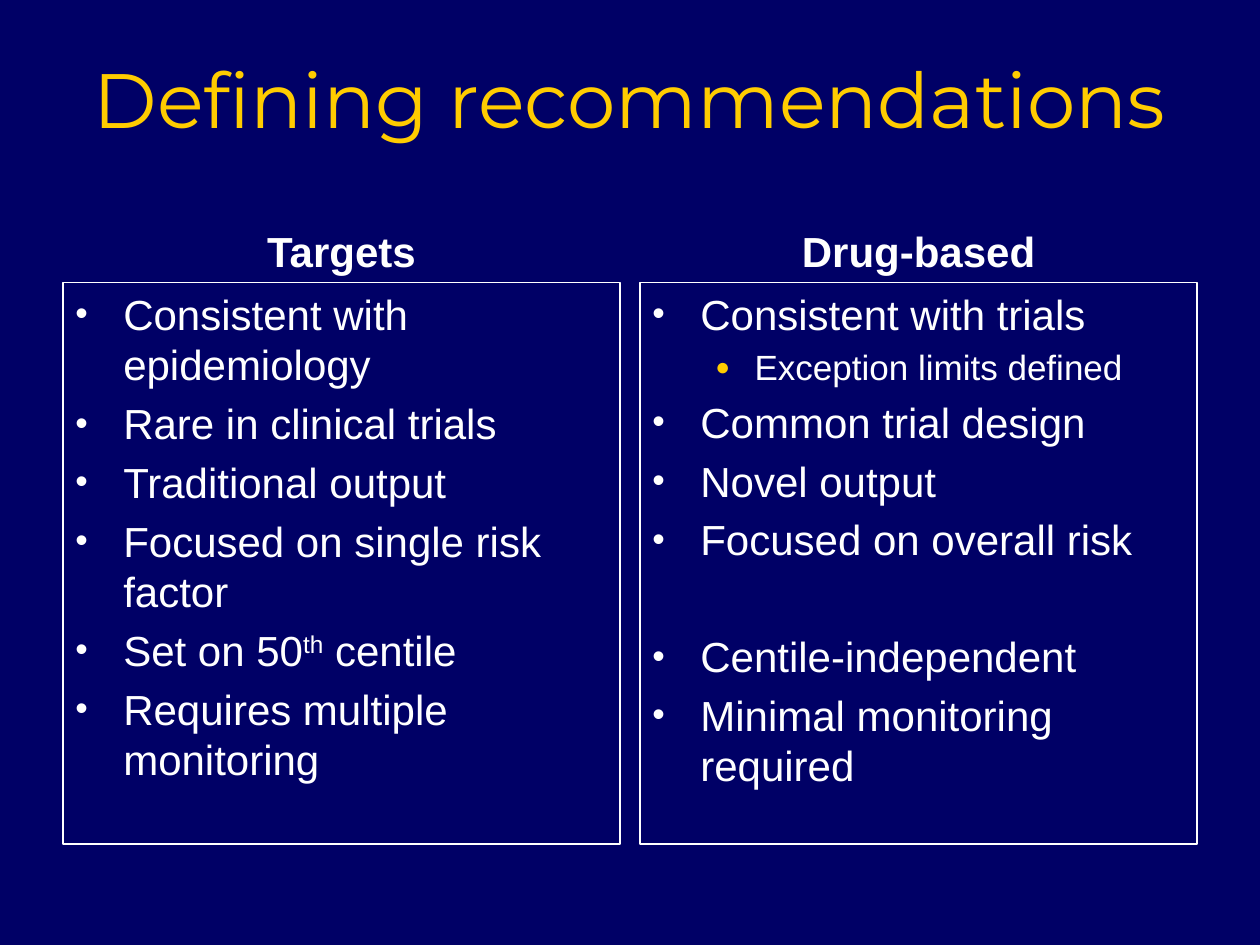
from lxml import etree
from pptx import Presentation
from pptx.dml.color import RGBColor
from pptx.enum.shapes import MSO_SHAPE
from pptx.enum.text import MSO_ANCHOR, PP_ALIGN
from pptx.oxml.ns import qn
from pptx.util import Inches, Pt

RECTANGLE = MSO_SHAPE.RECTANGLE
TOP, MIDDLE, BOTTOM = MSO_ANCHOR.TOP, MSO_ANCHOR.MIDDLE, MSO_ANCHOR.BOTTOM
LEFT, CENTER = PP_ALIGN.LEFT, PP_ALIGN.CENTER

COLORS = {"background": "000066", "title": "FFCC00", "text": "FFFFFF"}
LEVELS = [
    {"size": 24, "margin": 0.38, "hang": 0.38, "bullet": "•", "scale": 85, "color": "text"},
    {"size": 20, "margin": 0.81, "hang": 0.31, "bullet": "●", "scale": 70, "color": "title"},
]
SPACE_SHARE = 0.2
ROW_GAP = 38
COLUMNS = [
    ("Targets", [
        (0, ["Consistent with epidemiology"]),
        (0, ["Rare in clinical trials"]),
        (0, ["Traditional output"]),
        (0, ["Focused on single risk factor"]),
        (0, ["Set on 50", "th", " centile"]),
        (0, ["Requires multiple monitoring"]),
    ], None),
    ("Drug-based", [
        (0, ["Consistent with trials"]),
        (1, ["Exception limits defined"]),
        (0, ["Common trial design"]),
        (0, ["Novel output"]),
        (0, ["Focused on overall risk"]),
        (0, ["Centile-independent"]),
        (0, ["Minimal monitoring required"]),
    ], 5),
]


def rgb(name):
    return RGBColor.from_string(COLORS[name])


def style(paragraph, size, color="text", face="Arial", bold=False):
    font = paragraph.font
    font.name, font.size, font.bold = face, Pt(size), bold
    font.color.rgb = rgb(color)


def add_heading(slide, box, words, anchor, **look):
    heading = slide.shapes.add_textbox(*map(Inches, box)).text_frame
    heading.word_wrap = True
    heading.vertical_anchor = anchor
    line = heading.paragraphs[0]
    line.text = words
    line.alignment = CENTER
    style(line, **look)


def add_bullet(paragraph, level):
    props = paragraph._p.get_or_add_pPr()
    props.set("marL", str(Inches(level["margin"])))
    props.set("indent", str(-Inches(level["hang"])))
    color = etree.SubElement(props, qn("a:buClr"))
    etree.SubElement(color, qn("a:srgbClr"), val=COLORS[level["color"]])
    etree.SubElement(props, qn("a:buSzPct"), val=str(level["scale"] * 1000))
    etree.SubElement(props, qn("a:buFont"), typeface="Arial")
    etree.SubElement(props, qn("a:buChar"), char=level["bullet"])


def add_points(slide, box, points, gap_before):
    panel = slide.shapes.add_shape(RECTANGLE, *map(Inches, box))
    panel.shadow.inherit = False
    panel.fill.background()
    panel.line.color.rgb = rgb("text")
    panel.line.width = Pt(0.75)
    frame = panel.text_frame
    frame.word_wrap = True
    frame.vertical_anchor = TOP
    for index, (depth, parts) in enumerate(points):
        level = LEVELS[depth]
        point = frame.add_paragraph() if index else frame.paragraphs[0]
        point.level = depth
        point.alignment = LEFT
        add_bullet(point, level)
        style(point, level["size"])
        if index:
            space = ROW_GAP if index == gap_before else level["size"] * SPACE_SHARE
            point.space_before = Pt(space)
        for part in parts:
            run = point.add_run()
            run.text = part
            if part == "th":
                run.font._element.set("baseline", "30000")


def add_column(slide, box, heading, points, gap_before):
    left, top, width, height = box
    heading_height = 0.7
    add_heading(slide, (left, top, width, heading_height), heading, BOTTOM, size=24, bold=True)
    panel = (left, top + heading_height, width, height - heading_height)
    add_points(slide, panel, points, gap_before)


def main():
    deck = Presentation()
    deck.slide_width, deck.slide_height = Inches(10), Inches(7.5)
    slide = deck.slides.add_slide(deck.slide_layouts[6])
    slide.background.fill.solid()
    slide.background.fill.fore_color.rgb = rgb("background")
    add_heading(slide, (0.5, 0.15, 9, 1.25), "Defining recommendations", MIDDLE,
                size=44, color="title", face="Montserrat")
    margin, width, gutter = 0.5, 4.42, 0.16
    for index, column in enumerate(COLUMNS):
        left = margin + index * (width + gutter)
        add_column(slide, (left, 1.54, width, 5.16), *column)
    deck.save("out.pptx")


if __name__ == "__main__":
    main()
